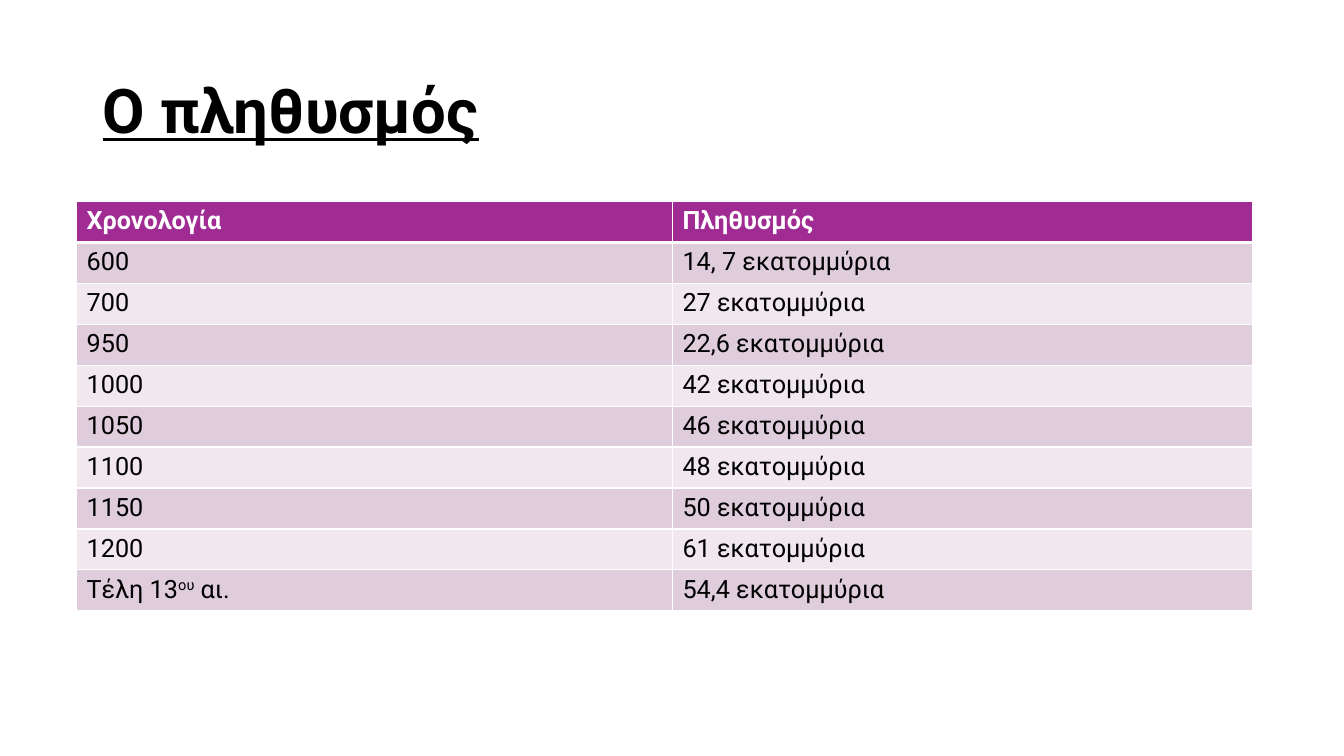
from lxml import etree
from pptx import Presentation
from pptx.dml.color import RGBColor
from pptx.enum.text import MSO_ANCHOR
from pptx.oxml.ns import qn
from pptx.util import Inches, Pt

MIDDLE = MSO_ANCHOR.MIDDLE
BLACK = RGBColor(0x00, 0x00, 0x00)
WHITE = RGBColor(0xFF, 0xFF, 0xFF)
PURPLE = RGBColor(0xA0, 0x2B, 0x93)
BAND_DARK = RGBColor(0xDF, 0xCD, 0xDC)
BAND_LIGHT = RGBColor(0xF0, 0xE8, 0xEE)

FONT = "Roboto"
COL_WIDTHS = (5.91, 5.75)
ROW_HEIGHT = 0.406
SUPERSCRIPT = "ου"
HEADER = ("Χρονολογία", "Πληθυσμός")
POPULATION = [
    ("600", "14, 7 εκατομμύρια"),
    ("700", "27 εκατομμύρια"),
    ("950", "22,6 εκατομμύρια"),
    ("1000", "42 εκατομμύρια"),
    ("1050", "46 εκατομμύρια"),
    ("1100", "48 εκατομμύρια"),
    ("1150", "50 εκατομμύρια"),
    ("1200", "61 εκατομμύρια"),
    (("Τέλη 13", SUPERSCRIPT, " αι."), "54,4 εκατομμύρια"),
]


def add_run(p, text, color, **formats):
    r = p.add_run()
    r.text = text
    r.font.color.rgb = color
    for name, value in {"name": FONT, **formats}.items():
        setattr(r.font, name, value)
    return r


def add_title(s, text):
    tf = s.shapes.add_textbox(Inches(0.92), Inches(0.4), Inches(11.5), Inches(1.45)).text_frame
    tf.word_wrap = True
    tf.vertical_anchor = MIDDLE
    p = tf.paragraphs[0]
    p.line_spacing = 0.9
    add_run(p, text, BLACK, size=Pt(44), bold=True, underline=True)


def set_borders(cell, widths):
    """Draw white borders; widths maps each side (L, R, T, B, in this order) to points."""
    tc_pr = cell._tc.get_or_add_tcPr()
    for side, width in widths.items():
        ln = etree.SubElement(tc_pr, qn(f"a:ln{side}"), w=str(Pt(width)))
        fill = etree.SubElement(ln, qn("a:solidFill"))
        etree.SubElement(fill, qn("a:srgbClr"), val=str(WHITE))


def fill_cell(cell, content, fill, color, bold, borders):
    """Style a cell; content is a string or a tuple of run texts."""
    set_borders(cell, borders)
    cell.fill.solid()
    cell.fill.fore_color.rgb = fill
    p = cell.text_frame.paragraphs[0]
    for text in (content,) if isinstance(content, str) else content:
        r = add_run(p, text, color, size=Pt(18), bold=bold)
        if text == SUPERSCRIPT:
            r._r.get_or_add_rPr().set("baseline", "30000")


def add_population_table(s):
    rows = [HEADER, *POPULATION]
    table = s.shapes.add_table(len(rows), len(HEADER), Inches(0.76), Inches(2),
                               Inches(sum(COL_WIDTHS)), Inches(ROW_HEIGHT * len(rows))).table
    for col, width in zip(table.columns, COL_WIDTHS):
        col.width = Inches(width)
    for i, row in enumerate(rows):
        table.rows[i].height = Inches(ROW_HEIGHT)
        is_header = i == 0
        fill = PURPLE if is_header else BAND_DARK if i % 2 else BAND_LIGHT
        color = WHITE if is_header else BLACK
        borders = {"L": 1, "R": 1, "T": 3 if i == 1 else 1, "B": 3 if is_header else 1}
        for j, content in enumerate(row):
            fill_cell(table.cell(i, j), content, fill, color, is_header, borders)


def main():
    prs = Presentation()
    prs.slide_width, prs.slide_height = Inches(13.33), Inches(7.5)
    s = prs.slides.add_slide(prs.slide_layouts[6])
    add_title(s, "Ο πληθυσμός")
    add_population_table(s)
    prs.save("out.pptx")


if __name__ == "__main__":
    main()
